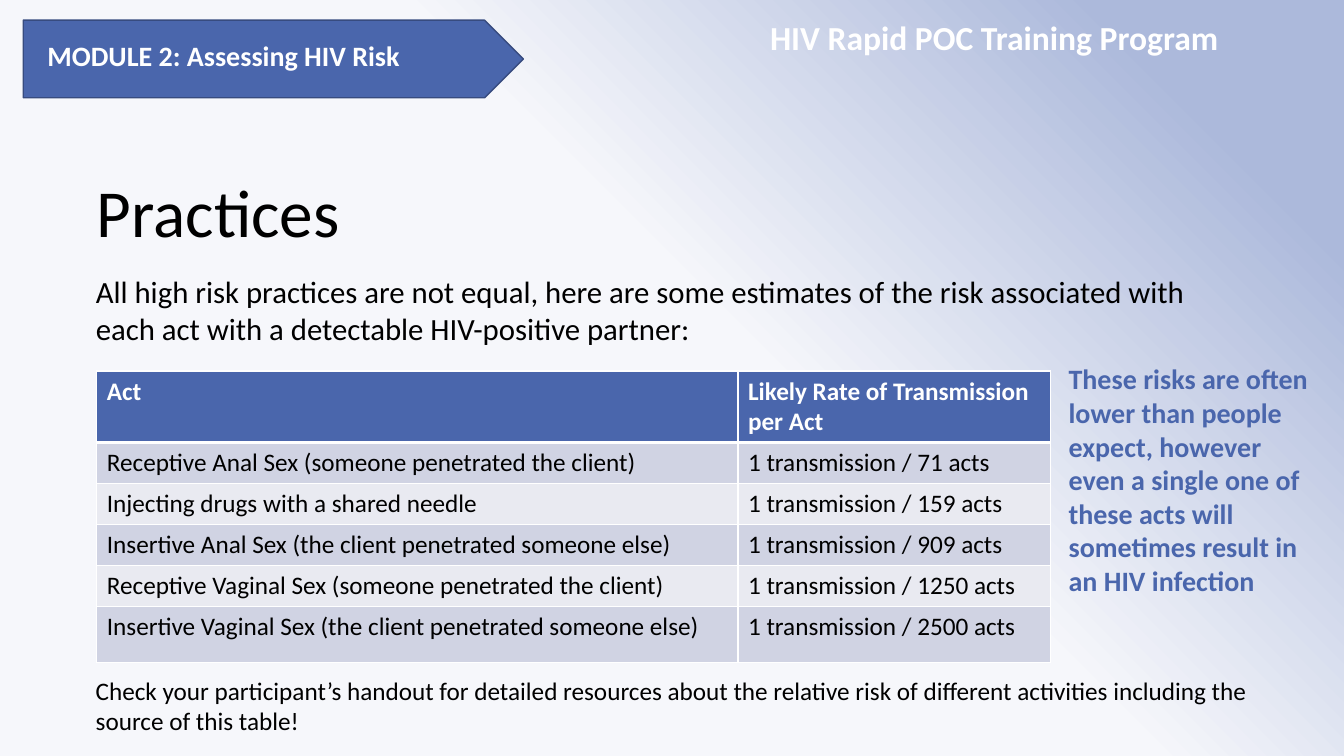
from dataclasses import dataclass

from lxml import etree
from pptx import Presentation, util as u
from pptx.dml.color import RGBColor
from pptx.enum import shapes, text
from pptx.oxml.ns import qn


@dataclass(frozen=True)
class Theme:
    font: str = "Calibri"
    blue: str = "4A66AC"
    edge: str = "374B7F"
    white: str = "FFFFFF"
    black: str = "000000"
    bands: tuple = ("D0D3E3", "E9EAF1")
    backdrop: tuple = ((0.55, "F6F7FB"), (0.88, "ACB9DB"))
    title: int = 48
    header: int = 24
    lead: int = 22
    label: int = 20
    body: int = 18


th = Theme()
rgb = RGBColor.from_string
prs = Presentation()
prs.slide_width, prs.slide_height = u.Inches(13.33), u.Inches(7.5)
s = prs.slides.add_slide(prs.slide_layouts[0])


def area(left, top, width, height):
    """Turn percentages of the slide into lengths."""
    sides = (prs.slide_width, prs.slide_height) * 2
    return [int(side * share / 100)
            for side, share in zip(sides, (left, top, width, height))]


def write(tf, words, size, color, bold=False):
    """Fill a text frame with one left-aligned paragraph."""
    tf.word_wrap = True
    p = tf.paragraphs[0]
    p.alignment = text.PP_ALIGN.LEFT
    r = p.add_run()
    r.text = words
    look = {"name": th.font, "size": u.Pt(size), "bold": bold}
    for key, value in look.items():
        setattr(r.font, key, value)
    r.font.color.rgb = rgb(color)
    return p


# Background
fill = s.background.fill
fill.gradient()
fill.gradient_angle = 45
for stop, (position, color) in zip(fill.gradient_stops, th.backdrop):
    stop.position = position
    stop.color.rgb = rgb(color)

# Title and lead sentence
placeholders = [
    (s.shapes.title, (6.45, 22.93, 86.12, 11.07), "Practices",
     th.title, text.MSO_ANCHOR.BOTTOM, 0.9),
    (s.placeholders[1], (6.38, 35.47, 84.47, 49.33),
     "All high risk practices are not equal, here are some estimates of the "
     "risk associated with each act with a detectable HIV-positive partner:",
     th.lead, text.MSO_ANCHOR.TOP, 1.0),
]
for sp, place, words, size, anchor, spacing in placeholders:
    sp.left, sp.top, sp.width, sp.height = area(*place)
    p = write(sp.text_frame, words, size, th.black)
    look = {"line_spacing": spacing, "space_before": u.Pt(0)}
    for key, value in look.items():
        setattr(p, key, value)
    sp.text_frame.vertical_anchor = anchor
    sp.text_frame.auto_size = text.MSO_AUTO_SIZE.NONE

# Table of transmission rates
rows = [
    ("Act", "Likely Rate of Transmission per Act"),
    ("Receptive Anal Sex (someone penetrated the client)",
     "1 transmission / 71 acts"),
    ("Injecting drugs with a shared needle", "1 transmission / 159 acts"),
    ("Insertive Anal Sex (the client penetrated someone else)",
     "1 transmission / 909 acts"),
    ("Receptive Vaginal Sex (someone penetrated the client)",
     "1 transmission / 1250 acts"),
    ("Insertive Vaginal Sex (the client penetrated someone else)",
     "1 transmission / 2500 acts"),
]
col_shares = (47.71, 23.26)
row_shares = (8.8, *[5.07] * 4, 7.47)
place = area(7.2, 49.07, sum(col_shares), sum(row_shares))
table = s.shapes.add_table(len(rows), len(col_shares), *place).table
for col, share in zip(table.columns, col_shares):
    col.width = int(prs.slide_width * share / 100)
for row, share in zip(table.rows, row_shares):
    row.height = int(prs.slide_height * share / 100)

for i, row in enumerate(rows):
    head = i == 0
    for j, words in enumerate(row):
        cell = table.cell(i, j)
        write(cell.text_frame, words, th.body,
              th.white if head else th.black, head)
        # Borders come before the fill in the cell properties
        tc_pr = cell._tc.get_or_add_tcPr()
        for side in ("lnL", "lnR", "lnT", "lnB"):
            thick = (head and side == "lnB") or (i == 1 and side == "lnT")
            ln = etree.SubElement(tc_pr, qn(f"a:{side}"),
                                  w=str(u.Pt(3 if thick else 1)))
            solid = etree.SubElement(ln, qn("a:solidFill"))
            etree.SubElement(solid, qn("a:srgbClr"), val=th.white)
        cell.fill.solid()
        cell.fill.fore_color.rgb = rgb(th.blue if head
                                       else th.bands[(i - 1) % 2])

# Module arrow
sp = s.shapes.add_shape(shapes.MSO_SHAPE.PENTAGON,
                        *area(1.73, 2.67, 37.21, 10.27))
sp.shadow.inherit = False
sp.fill.solid()
sp.fill.fore_color.rgb = rgb(th.blue)
sp.line.color.rgb = rgb(th.edge)
sp.line.width = u.Pt(1)

# Program name, module label, side note and footer
boxes = [
    ((56.56, 1.6, 42.76, 5.33), "HIV Rapid POC Training Program",
     th.header, th.white, True),
    ((2.78, 4.4, 34.73, 5.87), "MODULE 2: Assessing HIV Risk",
     th.label, th.white, True),
    ((78.77, 47.2, 19.43, 32.8),
     "These risks are often lower than people expect, however even a single "
     "one of these acts will sometimes result in an HIV infection",
     th.label, th.blue, True),
    ((6.38, 88.67, 88.52, 9.47),
     "Check your participant’s handout for detailed resources about the "
     "relative risk of different activities including the source of this "
     "table!", th.body, th.black, False),
]
for place, *content in boxes:
    write(s.shapes.add_textbox(*area(*place)).text_frame, *content)

prs.save("out.pptx")
